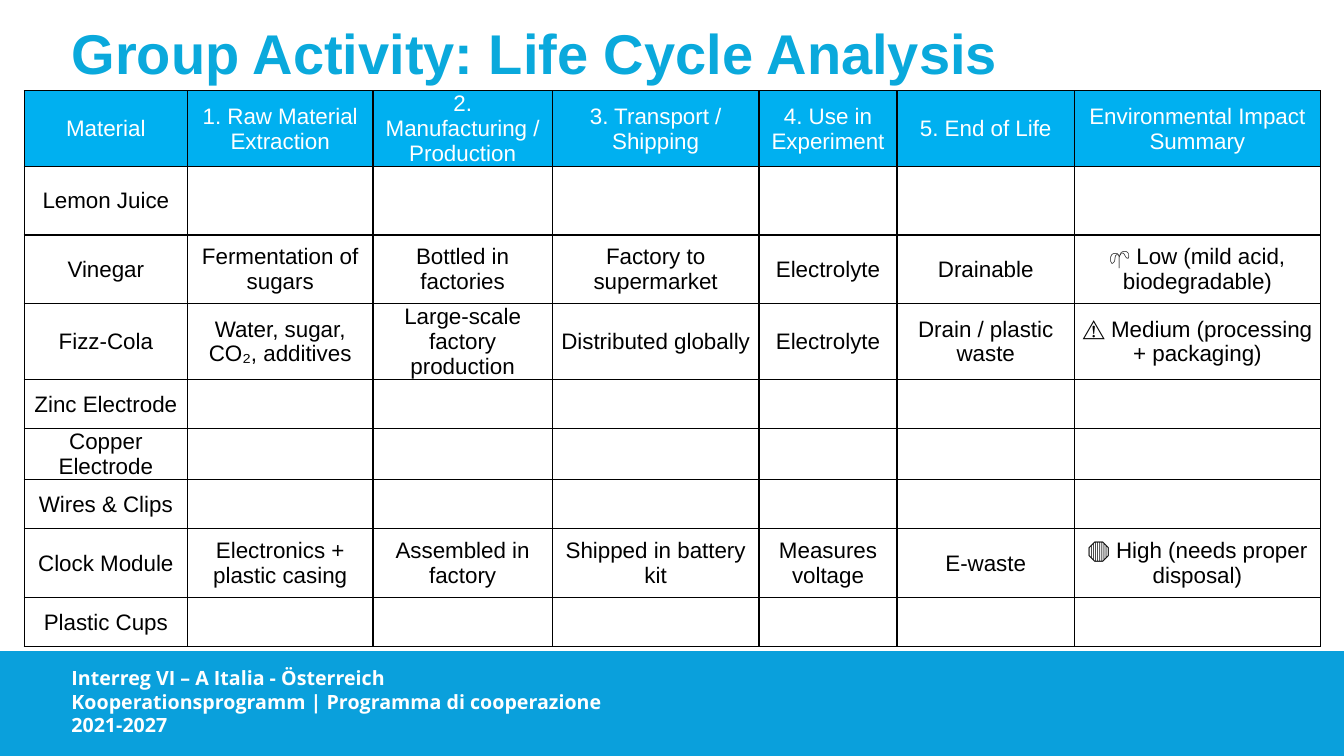
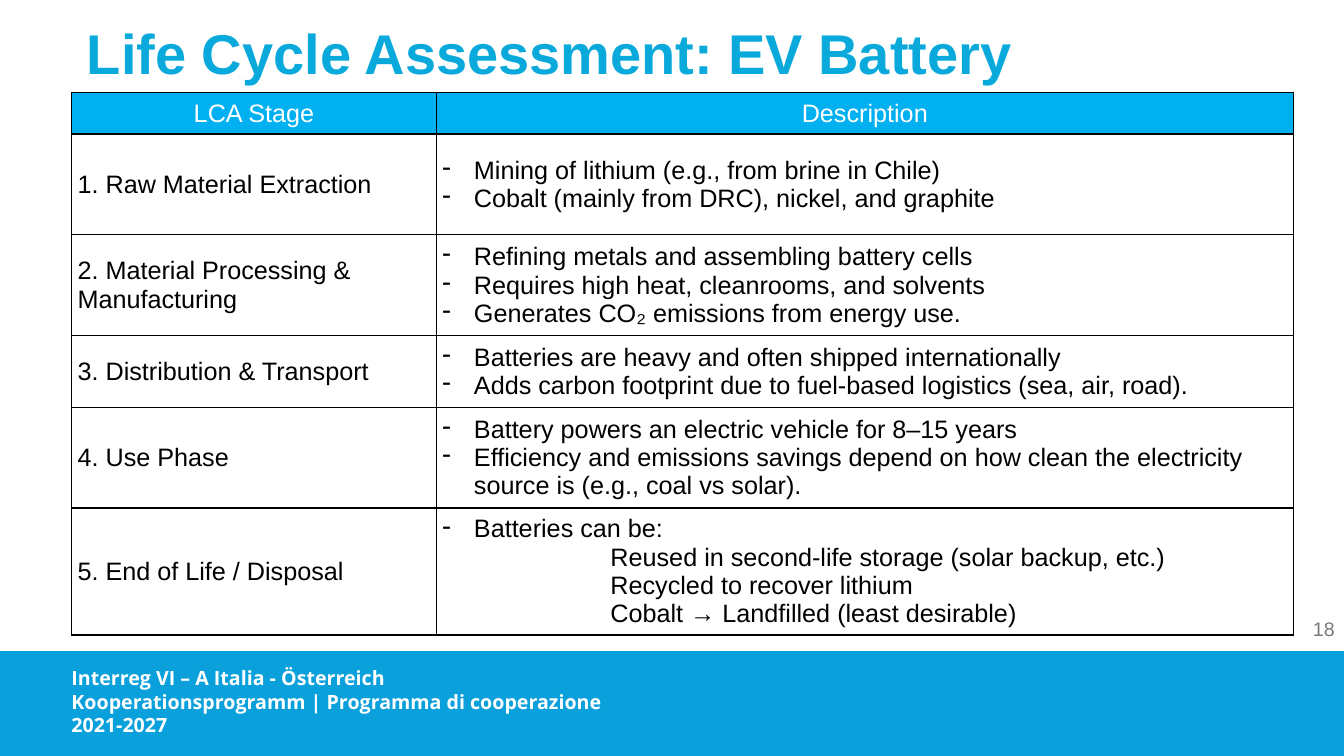
import pptx
import pptx.util
import pptx.dml.color
import pptx.enum.shapes
import pptx.enum.text
import pptx.oxml
import pptx.oxml.ns

BLUE, TITLE_BLUE, HEAD_BLUE = "0AA0DC", "0AA9DC", "00B0F0"
WHITE, BLACK, GRAY = "FFFFFF", "000000", "797979"
ALIGN = pptx.enum.text.PP_ALIGN
ANCHOR = pptx.enum.text.MSO_ANCHOR
NAMESPACE = pptx.oxml.ns.nsdecls("a")

deck = pptx.Presentation()
deck.slide_width = pptx.util.Inches(13.333)
deck.slide_height = pptx.util.Inches(7.5)


def grid(*counts):
    """Lengths in grid units: the slide is 160 columns by 90 rows."""
    return [round(count * deck.slide_height / 90) for count in counts]


def style(font, size, color, name="Arial", bold=False):
    font.size, font.name, font.bold = pptx.util.Pt(size), name, bold
    font.color.rgb = pptx.dml.color.RGBColor.from_string(color)


# Each page: title, table place, columns, rows and cells.
# A cell is a string, or a list of (level, text) lines.
pages = [
    dict(
        title="Group Activity: Life Cycle Analysis", title_left=8.52,
        table_at=(2.88, 10.8), size=16, align=ALIGN.CENTER,
        margins=(0.12, 0.12, 0.12, 0), number=None,
        columns=[19.44, 22.08, 21.36, 24.6, 16.44, 21.12, 29.28],
        rows=[8.16] * 4 + [5.88] * 3 + [8.16, 5.88],
        cells=[
            ["Material", "1. Raw Material Extraction",
             "2. Manufacturing / Production", "3. Transport / Shipping",
             "4. Use in Experiment", "5. End of Life",
             "Environmental Impact Summary"],
            ["Lemon Juice"],
            ["Vinegar", "Fermentation of sugars", "Bottled in factories",
             "Factory to supermarket", "Electrolyte", "Drainable",
             "🌱 Low (mild acid, biodegradable)"],
            ["Fizz-Cola", "Water, sugar, CO₂, additives",
             "Large-scale factory production", "Distributed globally",
             "Electrolyte", "Drain / plastic waste",
             "⚠️ Medium (processing + packaging)"],
            ["Zinc Electrode"],
            ["Copper Electrode"],
            ["Wires & Clips"],
            ["Clock Module", "Electronics + plastic casing",
             "Assembled in factory", "Shipped in battery kit",
             "Measures voltage", "E-waste",
             "🛑 High (needs proper disposal)"],
            ["Plastic Cups"],
        ],
    ),
    dict(
        title="Life Cycle Assessment: EV Battery", title_left=10.35,
        table_at=(8.52, 11.04), size=18, align=ALIGN.LEFT,
        margins=(0.72, 0.36, 0.72, 0.36), number="18",
        columns=[43.44, 102],
        rows=[4.92, 12, 12, 8.52, 12, 12],
        cells=[
            ["LCA Stage", "Description"],
            ["1. Raw Material Extraction", [
                (1, "Mining of lithium (e.g., from brine in Chile)"),
                (1, "Cobalt (mainly from DRC), nickel, and graphite")]],
            ["2. Material Processing & Manufacturing", [
                (1, "Refining metals and assembling battery cells"),
                (1, "Requires high heat, cleanrooms, and solvents"),
                (1, "Generates CO₂ emissions from energy use.")]],
            ["3. Distribution & Transport", [
                (1, "Batteries are heavy and often shipped internationally"),
                (1, "Adds carbon footprint due to fuel-based logistics (sea, air, road).")]],
            ["4. Use Phase", [
                (1, "Battery powers an electric vehicle for 8–15 years"),
                (1, "Efficiency and emissions savings depend on how clean the "
                    "electricity source is (e.g., coal vs solar).")]],
            ["5. End of Life / Disposal", [
                (1, "Batteries can be:"),
                (2, "Reused in second-life storage (solar backup, etc.)"),
                (2, "Recycled to recover lithium"),
                (2, "Cobalt → Landfilled (least desirable)")]],
        ],
    ),
]

layout = deck.slide_layouts[5]
slides = [deck.slides.add_slide(layout) for entry in pages]

# Footer band and programme name, moved to the shared layout
band = slides[0].shapes.add_shape(
    pptx.enum.shapes.MSO_SHAPE.RECTANGLE, *grid(0, 77.52, 160, 12.48))
band.shadow.inherit = False
band.fill.solid()
band.fill.fore_color.rgb = pptx.dml.color.RGBColor.from_string(BLUE)
band.line.fill.background()
programme = slides[0].shapes.add_textbox(*grid(7.32, 78.72, 71.76, 9.72))
programme.text_frame.word_wrap = True
programme.text_frame.text = (
    "Interreg VI – A Italia - Österreich\v"
    "Kooperationsprogramm | Programma di cooperazione\n2021-2027")
for para in programme.text_frame.paragraphs:
    style(para.font, 14, WHITE, "Open Sans", True)
for shape_id, shape in enumerate((band, programme), 20):
    shape.element.nvSpPr.cNvPr.id = shape_id
    layout.shapes.element.append(shape.element)

for page, entry in zip(slides, pages):
    # Title
    title = page.shapes.title
    left = entry["title_left"]
    title.left, title.top, title.width, title.height = grid(left, 3.12, 160 - left, 9.48)
    frame = title.text_frame
    frame.text = entry["title"]
    frame.auto_size = pptx.enum.text.MSO_AUTO_SIZE.NONE
    frame.vertical_anchor = ANCHOR.TOP
    frame.margin_left = frame.margin_right = frame.margin_top = frame.margin_bottom = 0
    para = frame.paragraphs[0]
    para.alignment, para.line_spacing = ALIGN.LEFT, 0.9
    style(para.font, 40, TITLE_BLUE, bold=True)

    # Page number
    if entry["number"]:
        box = page.shapes.add_textbox(*grid(153.96, 72.48, 6.12, 4.8))
        box.text_frame.word_wrap = True
        box.text_frame.vertical_anchor = ANCHOR.MIDDLE
        para = box.text_frame.paragraphs[0]
        para.text, para.alignment = entry["number"], ALIGN.RIGHT
        style(para.font, 14, GRAY)

    # Table
    columns, rows = entry["columns"], entry["rows"]
    table = page.shapes.add_table(
        len(rows), len(columns),
        *grid(*entry["table_at"], sum(columns), sum(rows))).table
    table.first_row = table.horz_banding = False
    for column, width in zip(table.columns, grid(*columns)):
        column.width = width
    for row, height in zip(table.rows, grid(*rows)):
        row.height = height

    for row_index, texts in enumerate(entry["cells"]):
        is_head = row_index == 0
        for column_index in range(len(columns)):
            cell = table.cell(row_index, column_index)
            content = texts[column_index] if column_index < len(texts) else ""
            lines = [(0, content)] if isinstance(content, str) else content
            cell.vertical_anchor = ANCHOR.MIDDLE
            (cell.margin_left, cell.margin_top,
             cell.margin_right, cell.margin_bottom) = grid(*entry["margins"])

            # Borders, then fill
            properties = cell._tc.get_or_add_tcPr()
            for side in "LRTB":
                properties.append(pptx.oxml.parse_xml(
                    f'<a:ln{side} {NAMESPACE} w="12700"><a:solidFill>'
                    f'<a:srgbClr val="{BLACK}"/></a:solidFill></a:ln{side}>'))
            if is_head:
                cell.fill.solid()
                cell.fill.fore_color.rgb = pptx.dml.color.RGBColor.from_string(HEAD_BLUE)
            else:
                cell.fill.background()

            # Text, with dashes at level 1 and a deep indent at level 2
            cell.text_frame.text = "\n".join(text for level, text in lines)
            for para, (level, text) in zip(cell.text_frame.paragraphs, lines):
                para.alignment = ALIGN.CENTER if is_head else entry["align"]
                if level:
                    margin, indent = grid(*((3.75, -3.75) if level == 1 else (20, 0)))
                    paragraph_properties = para._p.get_or_add_pPr()
                    paragraph_properties.set("marL", str(margin))
                    paragraph_properties.set("indent", str(indent))
                    bullet = '<a:buChar {} char="-"/>' if level == 1 else "<a:buNone {}/>"
                    paragraph_properties.append(
                        pptx.oxml.parse_xml(bullet.format(NAMESPACE)))
                style(para.font, entry["size"], WHITE if is_head else BLACK)

deck.save("out.pptx")
